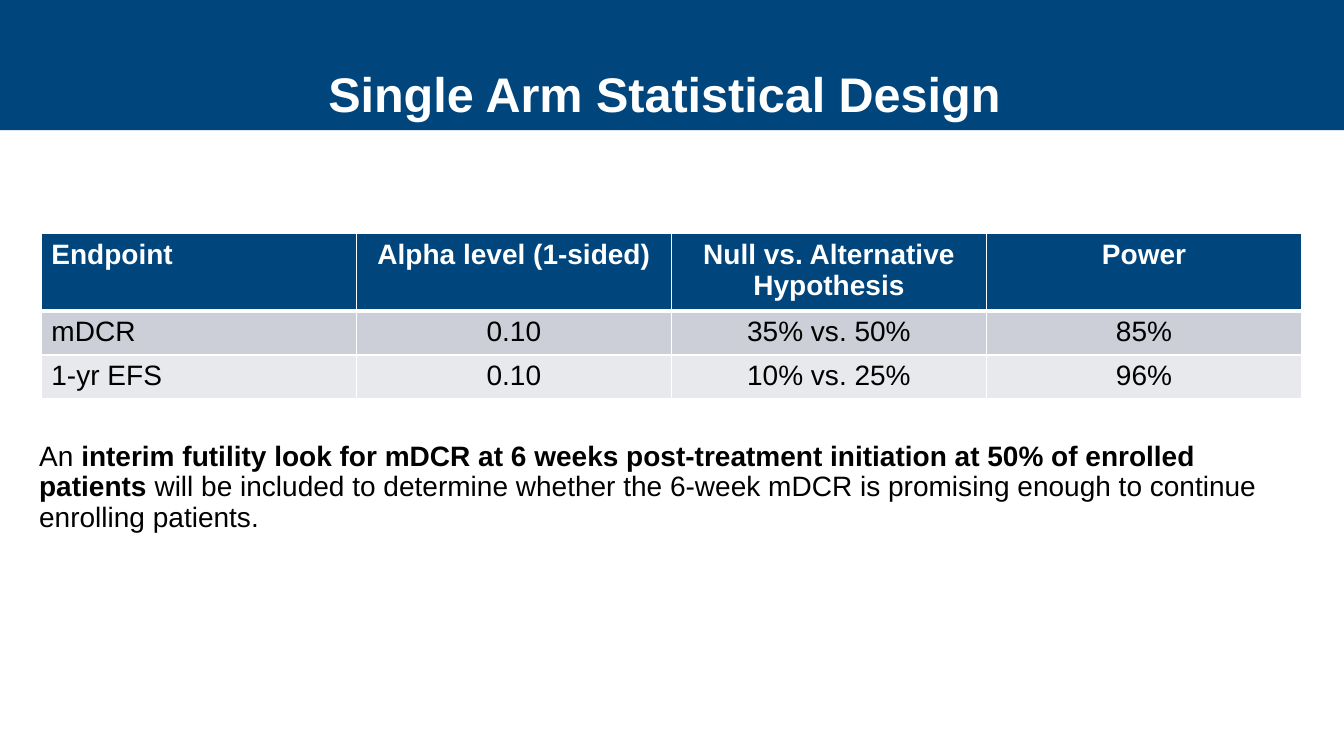
import dataclasses

import pptx
import pptx.dml.color
import pptx.enum.shapes
import pptx.enum.text
import pptx.oxml
import pptx.oxml.ns
import pptx.util

Inches = pptx.util.Inches
Pt = pptx.util.Pt
ALIGN = pptx.enum.text.PP_ALIGN


@dataclasses.dataclass(frozen=True)
class Theme:
    font: str = "Arial"
    navy: str = "00457C"
    white: str = "FFFFFF"
    black: str = "000000"
    bands: tuple = ("CCCFD7", "E7E9EC")
    title_size: float = 34.7
    body_size: float = 20
    line_spacing: float = 0.9


def rgb(color):
    return pptx.dml.color.RGBColor.from_string(color)


class SlideBuilder:
    def __init__(self, slide, theme):
        self.slide = slide
        self.theme = theme

    def style(self, p, size, color, bold=None, align=ALIGN.LEFT):
        p.alignment = align
        p.font.name = self.theme.font
        p.font.size = Pt(size)
        p.font.color.rgb = rgb(color)
        p.font.bold = bold

    def band(self, x, y, w, h):
        sp = self.slide.shapes.add_shape(
            pptx.enum.shapes.MSO_SHAPE.RECTANGLE,
            Inches(x), Inches(y), Inches(w), Inches(h))
        sp.shadow.inherit = False
        sp.fill.solid()
        sp.fill.fore_color.rgb = rgb(self.theme.navy)
        sp.line.fill.background()

    def text_box(self, x, y, w, h):
        tf = self.slide.shapes.add_textbox(
            Inches(x), Inches(y), Inches(w), Inches(h)).text_frame
        tf.word_wrap = True
        tf.paragraphs[0].line_spacing = self.theme.line_spacing
        return tf

    def title(self, text, x, y, w, h):
        tf = self.text_box(x, y, w, h)
        tf.vertical_anchor = pptx.enum.text.MSO_ANCHOR.BOTTOM
        tf.margin_left = tf.margin_right = Inches(0.05)
        tf.margin_top = tf.margin_bottom = Inches(0.05)
        p = tf.paragraphs[0]
        p.text = text
        self.style(p, self.theme.title_size, self.theme.white, True, ALIGN.CENTER)

    def body(self, runs, x, y, w, h):
        """Add one paragraph from (text, bold) pairs."""
        p = self.text_box(x, y, w, h).paragraphs[0]
        p.space_after = Pt(8)
        self.style(p, self.theme.body_size, self.theme.black)
        for text, bold in runs:
            r = p.add_run()
            r.text = text
            r.font.bold = bold

    def border(self, cell, side, width):
        line = pptx.oxml.parse_xml(
            f'<a:{side} {pptx.oxml.ns.nsdecls("a")} w="{Pt(width)}"><a:solidFill>'
            f'<a:srgbClr val="{self.theme.white}"/></a:solidFill></a:{side}>')
        tc_pr = cell._tc.get_or_add_tcPr()
        tc_pr.insert(len(tc_pr.findall("*")) - 1, line)  # lines precede the fill

    def table(self, rows, x, y, w, row_height):
        table = self.slide.shapes.add_table(
            len(rows), len(rows[0]), Inches(x), Inches(y),
            Inches(w), Inches(row_height * len(rows))).table
        for i, values in enumerate(rows):
            header = i == 0
            fill = self.theme.navy if header else self.theme.bands[(i - 1) % 2]
            color = self.theme.white if header else self.theme.black
            for j, value in enumerate(values):
                cell = table.cell(i, j)
                cell.fill.solid()
                cell.fill.fore_color.rgb = rgb(fill)
                for side in ("lnL", "lnR", "lnT", "lnB"):
                    below_header = (i, side) in ((0, "lnB"), (1, "lnT"))
                    self.border(cell, side, 3 if below_header else 1)
                p = cell.text_frame.paragraphs[0]
                p.text = value
                self.style(p, self.theme.body_size, color, header,
                           ALIGN.CENTER if j else ALIGN.LEFT)


def main():
    prs = pptx.Presentation()
    prs.slide_width, prs.slide_height = Inches(13.33), Inches(7.5)
    s = SlideBuilder(prs.slides.add_slide(prs.slide_layouts[6]), Theme())

    s.band(0, 0, 13.33, 1.29)
    s.title("Single Arm Statistical Design ", 0.41, 0.18, 12.5, 1.09)
    s.table([
        ("Endpoint", "Alpha level (1-sided)", "Null vs. Alternative Hypothesis", "Power"),
        ("mDCR", "0.10", "35% vs. 50%", "85%"),
        ("1-yr EFS", "0.10", "10% vs. 25%", "96%"),
    ], 0.41, 2.32, 12.5, 0.41)
    s.body([
        ("An ", False),
        ("interim futility look for mDCR at 6 weeks post-treatment initiation "
         "at 50% of enrolled patients ", True),
        ("will be included to determine whether the 6-week mDCR is promising "
         "enough to continue enrolling patients.", False),
    ], 0.29, 4.34, 12.5, 2.4)
    prs.save("out.pptx")


if __name__ == "__main__":
    main()
